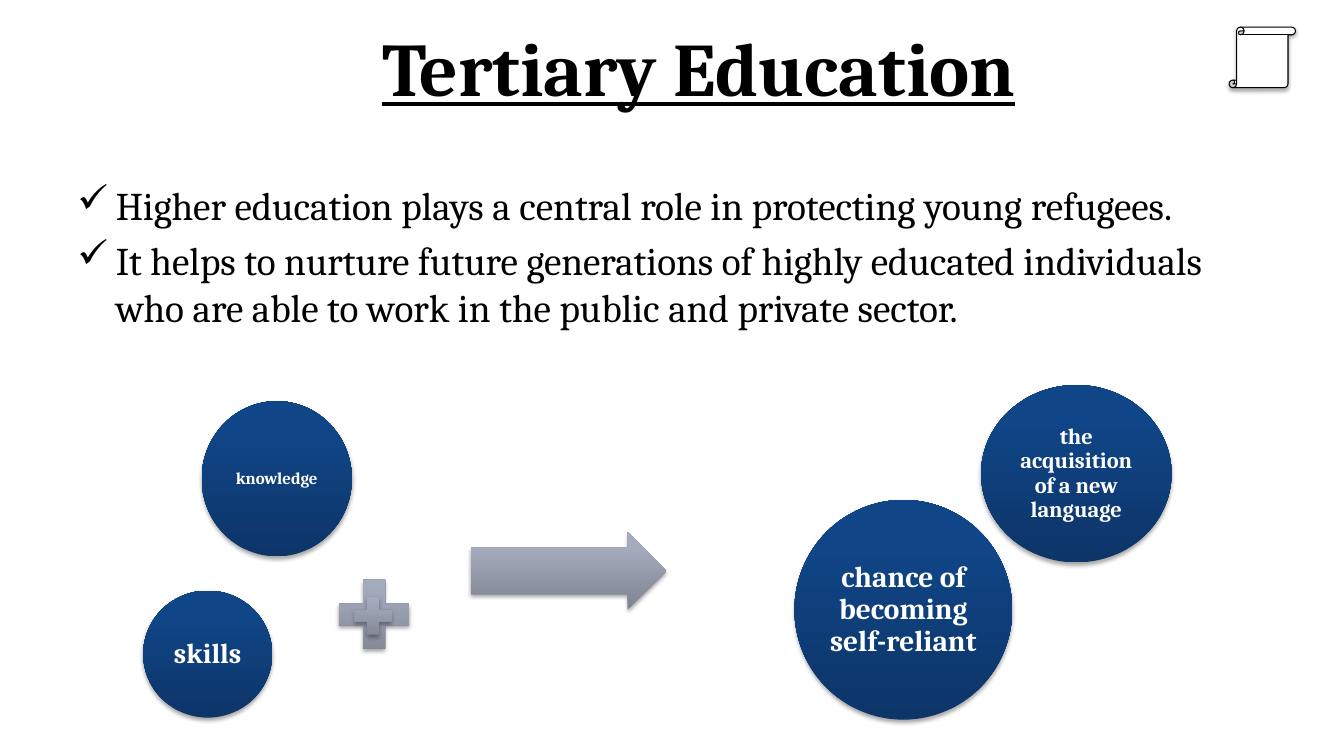
from copy import deepcopy
from dataclasses import dataclass

from lxml import etree
from pptx import Presentation
from pptx import util as u
from pptx.dml.color import RGBColor
from pptx.enum import shapes, text
from pptx.oxml.ns import qn

MSO = shapes.MSO_SHAPE


@dataclass(frozen=True)
class Theme:
    font: str = "Cambria"
    ink: str = "000000"
    paper: str = "FFFFFF"
    navy: tuple = ((0, "0D3568"), (0.8, "104587"), (1, "0E458A"))
    grey: tuple = ((0, "7E8391"), (0.8, "A4ABBC"), (1, "A4ABBE"))
    title: int = 54
    body: int = 28


def rgb(color):
    return RGBColor.from_string(color)


def write(p, words, *, font, size, color, bold=False, underline=False,
          align=text.PP_ALIGN.LEFT, line_spacing=None):
    p.alignment = align
    if line_spacing:
        p.line_spacing = line_spacing
    r = p.add_run()
    r.text = words
    f = r.font
    f.name, f.size, f.bold, f.underline = font, u.Pt(size), bold, underline
    f.color.rgb = rgb(color)


class Slide:
    def __init__(self, prs, theme):
        self.theme = theme
        self.s = prs.slides.add_slide(prs.slide_layouts[6])
        self.s.background.fill.solid()
        self.s.background.fill.fore_color.rgb = rgb(theme.paper)

    def textbox(self, box, anchor=text.MSO_ANCHOR.TOP):
        tf = self.s.shapes.add_textbox(*map(u.Inches, box)).text_frame
        tf.word_wrap = True
        tf.vertical_anchor = anchor
        return tf

    def title(self, words, box):
        tf = self.textbox(box, text.MSO_ANCHOR.MIDDLE)
        write(tf.paragraphs[0], words, font=self.theme.font, size=self.theme.title,
              color=self.theme.ink, bold=True, underline=True,
              align=text.PP_ALIGN.CENTER)

    def checklist(self, items, box):
        tf = self.textbox(box)
        for i, item in enumerate(items):
            p = tf.add_paragraph() if i else tf.paragraphs[0]
            write(p, item, font=self.theme.font, size=self.theme.body,
                  color=self.theme.ink)
            p.space_before = u.Pt(self.theme.body * 0.2)
            pPr = p._p.get_or_add_pPr()
            pPr.set("marL", str(u.Inches(0.38)))
            pPr.set("indent", str(u.Inches(-0.38)))
            etree.SubElement(pPr, qn("a:buChar")).set("char", "✓")

    def shape(self, kind, box):
        """Add a white preset shape without outline, with a soft shadow below."""
        sp = self.s.shapes.add_shape(kind, *map(u.Inches, box))
        sp.fill.solid()
        sp.fill.fore_color.rgb = rgb(self.theme.paper)
        sp.line.fill.background()
        sp.shadow.inherit = False
        effects = sp._element.spPr.find(qn("a:effectLst"))
        shadow = etree.SubElement(effects, qn("a:outerShdw"), blurRad=str(u.Pt(3.1)),
                                  dist=str(u.Pt(1.8)), dir="5400000", rotWithShape="0")
        color = etree.SubElement(shadow, qn("a:srgbClr"), val=self.theme.ink)
        etree.SubElement(color, qn("a:alpha"), val="35000")
        return sp

    def shaded(self, kind, box, stops):
        """Add a shape whose gradient runs from bottom to top."""
        sp = self.shape(kind, box)
        sp.fill.gradient()
        sp.fill.gradient_angle = 90
        gs_list = sp._element.spPr.find(qn("a:gradFill")).find(qn("a:gsLst"))
        gs_list.append(deepcopy(gs_list[-1]))
        for stop, (position, color) in zip(sp.fill.gradient_stops, stops):
            stop.position = position
            stop.color.rgb = rgb(color)
        return sp

    def bubble(self, words, box, size, inset):
        tf = self.shaded(MSO.OVAL, box, self.theme.navy).text_frame
        tf.word_wrap = True
        tf.vertical_anchor = text.MSO_ANCHOR.MIDDLE
        tf.margin_left = tf.margin_right = u.Inches(inset)
        tf.margin_top = tf.margin_bottom = u.Inches(inset)
        write(tf.paragraphs[0], words, font=self.theme.font, size=size,
              color=self.theme.paper, bold=True, align=text.PP_ALIGN.CENTER,
              line_spacing=0.9)

    def scroll(self, box):
        sp = self.shape(MSO.VERTICAL_SCROLL, box)
        sp.line.color.rgb = rgb(self.theme.ink)
        sp.line.width = u.Pt(0.75)


def main():
    prs = Presentation()
    prs.slide_width, prs.slide_height = u.Inches(13.33), u.Inches(7.5)
    theme = Theme()
    s = Slide(prs, theme)

    s.title("Tertiary Education", (0.93, 0.03, 12, 1.25))
    s.checklist([
        "Higher education plays a central role in protecting young refugees.",
        "It helps to nurture future generations of highly educated individuals "
        "who are able to work in the public and private sector.",
    ], (0.67, 1.75, 12, 4.95))

    for words, box, size, inset in [
        ("knowledge", (2, 3.98, 1.49, 1.54), 12, 0.02),
        ("skills", (1.42, 5.86, 1.28, 1.26), 20, 0.03),
        ("chance of becoming self-reliant", (7.88, 4.96, 2.16, 2.18), 21, 0.03),
        ("the acquisition of a new language", (9.73, 3.82, 1.89, 1.76), 16, 0.02),
    ]:
        s.bubble(words, box, size, inset)

    for box in [(3.24, 5.63, 0.94, 0.93), (3.45, 5.86, 0.5, 0.5)]:
        s.shaded(MSO.MATH_PLUS, box, theme.grey)
    arrow = s.shaded(MSO.RIGHT_ARROW, (4.67, 5.28, 1.94, 0.77), theme.grey)
    arrow.adjustments[0] = 0.6
    s.scroll((12.19, 0.27, 0.66, 0.6))

    prs.save("out.pptx")


if __name__ == "__main__":
    main()
